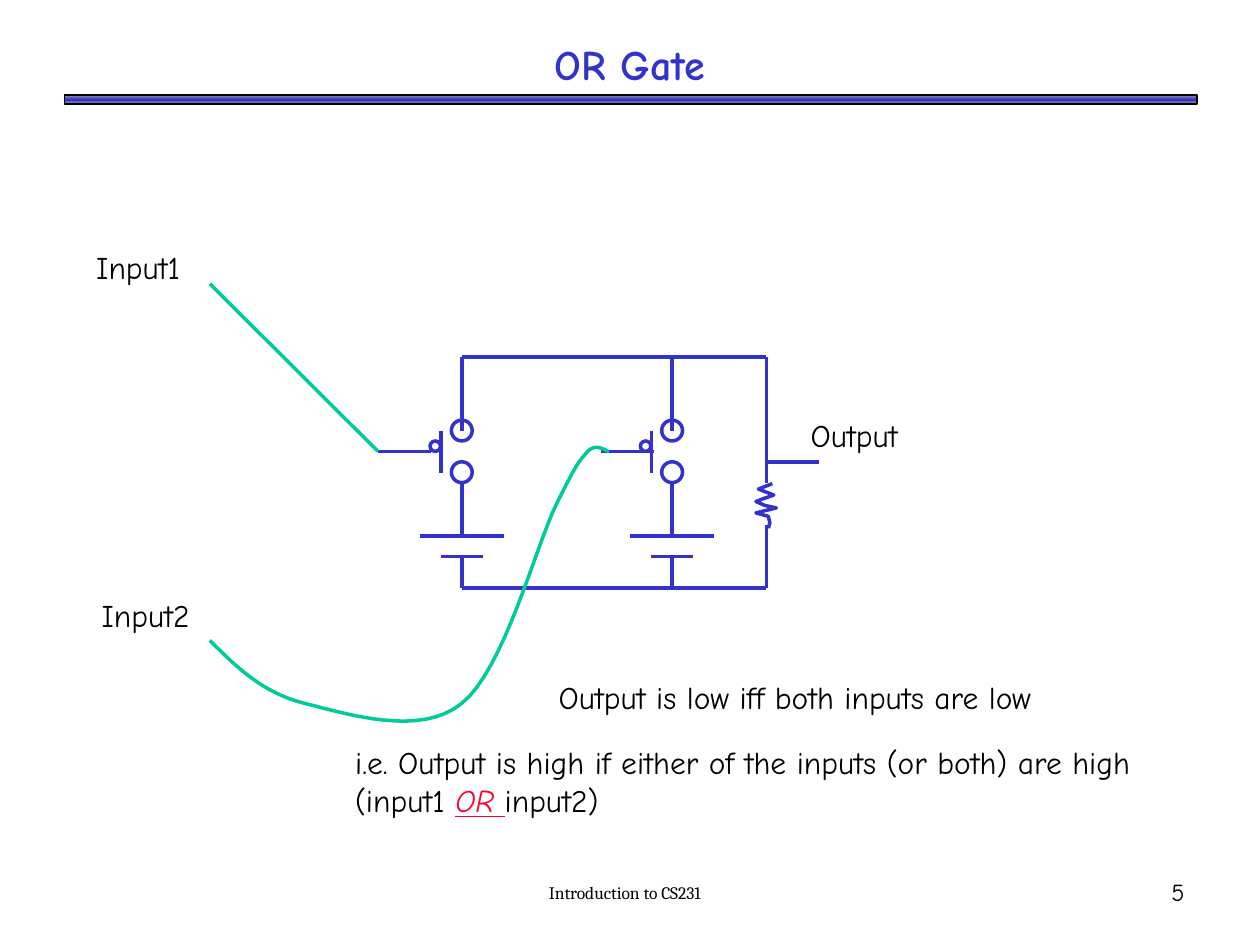
from copy import deepcopy

from lxml import etree
from pptx import Presentation
from pptx import util as u
from pptx.dml.color import RGBColor
from pptx.enum import shapes, text
from pptx.oxml.ns import qn

BLUE, GREEN, RED, BLACK, GREY = "3333CC", "00CC99", "FF0033", "000000", "969696"
FONT = "Comic Neue"
TOP, BOTTOM, RIGHT = 7.2, 11.85, 15.45  # rails of the circuit, cm
LEAD_Y = 9.1

RESISTOR = [(15.57, 9.75), (15.29, 9.86), (15.6, 9.98), (15.37, 10.06),
            (15.24, 10.11), (15.42, 10.19), (15.65, 10.24), (15.24, 10.34),
            (15.49, 10.41), (15.52, 10.54), (15.49, 10.65)]
INPUT2_START = (4.23, 12.91)
INPUT2_CURVES = [  # two control points and an end point each
    ((4.76, 13.44), (5.29, 13.97), (6.14, 14.18)),
    ((6.99, 14.39), (8.47, 14.87), (9.31, 14.18)),
    ((10.16, 13.51), (10.8, 11.01), (11.22, 10.16)),
    ((11.64, 9.31), (11.69, 9.28), (11.85, 9.1)),
    ((12.03, 8.92), (12.21, 9.1), (12.28, 9.1)),
]


def color(value):
    return RGBColor.from_string(value)


def style_outline(shape, stroke):
    shape.shadow.inherit = False
    shape.fill.background()
    shape.line.color.rgb = color(stroke)
    shape.line.width = u.Pt(2)


def add_wire(page, x1, y1, x2, y2, stroke=BLUE):
    wire = page.shapes.add_connector(
        shapes.MSO_CONNECTOR.STRAIGHT, u.Cm(x1), u.Cm(y1), u.Cm(x2), u.Cm(y2))
    wire.line.color.rgb = color(stroke)
    wire.line.width = u.Pt(2)
    etree.SubElement(wire._element.spPr, qn("a:effectLst"))


def add_circle(page, x, y, size):
    circle = page.shapes.add_shape(
        shapes.MSO_SHAPE.OVAL, u.Cm(x), u.Cm(y), u.Cm(size), u.Cm(size))
    style_outline(circle, BLUE)


def add_path(page, points, stroke):
    places = [(u.Cm(x), u.Cm(y)) for x, y in points]
    builder = page.shapes.build_freeform(*places[0])
    builder.add_line_segments(places[1:], close=False)
    style_outline(builder.convert_to_shape(), stroke)


def curve_points(start, curves, steps=16):
    """Sample a chain of cubic Bézier curves."""
    points = [start]
    for first, second, end in curves:
        for step in range(1, steps + 1):
            t = step / steps
            weights = ((1 - t) ** 3, 3 * t * (1 - t) ** 2, 3 * t * t * (1 - t), t ** 3)
            corners = (start, first, second, end)
            points.append(tuple(sum(w * c[axis] for w, c in zip(weights, corners))
                                for axis in (0, 1)))
        start = end
    return points


def add_text(page, place, *words, size=18, font=FONT, fill=BLACK, bold=False,
             align=text.PP_ALIGN.LEFT, anchor=text.MSO_ANCHOR.TOP):
    """Add a one-paragraph text box and return its spans."""
    box = page.shapes.add_textbox(*(u.Cm(length) for length in place))
    box.text_frame.word_wrap = True
    box.text_frame.vertical_anchor = anchor
    para = box.text_frame.paragraphs[0]
    para.alignment = align
    spans = []
    for word in words:
        span = para.add_run()
        span.text = word
        span.font.name = font
        span.font.size = u.Pt(size)
        span.font.bold = bold
        span.font.color.rgb = color(fill)
        spans.append(span)
    return spans


def add_title_bar(page):
    bar = page.shapes.add_shape(
        shapes.MSO_SHAPE.RECTANGLE, u.Cm(1.3), u.Cm(1.92), u.Cm(22.83), u.Cm(0.18))
    bar.shadow.inherit = False
    bar.line.color.rgb = color(BLACK)
    bar.line.width = u.Pt(1)
    bar.fill.gradient()
    bar.fill.gradient_angle = 90
    first = bar._element.spPr.find(".//" + qn("a:gs"))
    first.addnext(deepcopy(first))
    for stop, (position, value) in zip(
            bar.fill.gradient_stops, ((0, GREY), (0.5, BLUE), (1, GREY))):
        stop.position = position
        stop.color.rgb = color(value)


def add_switch(page, x):
    """Draw a switch and its battery between the rails, centred on x."""
    add_wire(page, x, TOP, x, 8.68)
    for y in (8.47, 9.31):
        add_circle(page, x - 0.21, y, 0.42)
    add_wire(page, x, 9.74, x, 10.8)
    for y, half in ((10.8, 0.85), (11.22, 0.42)):
        add_wire(page, x - half, y, x + half, y)
    add_wire(page, x, 11.22, x, BOTTOM)
    add_wire(page, x - 0.42, 8.68, x - 0.42, 9.53)
    add_circle(page, x - 0.64, 8.89, 0.21)


def add_circuit(page):
    left_switch, right_switch = 9.31, 13.55
    for y in (TOP, BOTTOM):
        add_wire(page, left_switch, y, RIGHT, y)
    for x in (left_switch, right_switch):
        add_switch(page, x)
    for lead_end in (8.68, 13.18):
        add_wire(page, lead_end, LEAD_Y, lead_end - 1.06, LEAD_Y)
    add_wire(page, RIGHT, TOP, RIGHT, 9.74)
    add_path(page, RESISTOR, BLUE)
    add_wire(page, RIGHT, 10.58, RIGHT, BOTTOM)
    add_wire(page, RIGHT, 9.31, 16.51, 9.31)
    add_wire(page, 4.23, 5.72, 7.62, LEAD_Y, GREEN)
    add_path(page, curve_points(INPUT2_START, INPUT2_CURVES), GREEN)


def add_labels(page):
    for label, x, y in (("Input1", 1.69, 4.87), ("Input2", 1.8, 11.89),
                        ("Output", 16.09, 8.26)):
        add_text(page, (x, y, 2.96, 1.02), label)
    add_text(page, (11.01, 13.55, 13.34, 1.02), "Output is low iff both inputs are low")
    spans = add_text(
        page, (6.91, 14.86, 17.36, 1.78),
        "i.e. Output is high if either of the inputs (or both) are high (input1 ",
        "OR ", "input2)")
    operator = spans[1].font
    operator.italic = operator.underline = True
    operator.color.rgb = color(RED)


def main():
    deck = Presentation()
    deck.slide_width, deck.slide_height = u.Cm(25.4), u.Cm(19.05)
    page = deck.slides.add_slide(deck.slide_layouts[6])
    middle = text.MSO_ANCHOR.MIDDLE
    add_title_bar(page)
    add_text(page, (7.62, 17.35, 9.95, 1.27), "Introduction to CS231", size=10,
             font="Cambria", align=text.PP_ALIGN.CENTER, anchor=middle)
    add_text(page, (18.85, 17.35, 5.28, 1.27), "5", size=14,
             align=text.PP_ALIGN.RIGHT, anchor=middle)
    add_text(page, (1.27, 0.64, 22.86, 1.27), "OR Gate", size=24, fill=BLUE,
             bold=True, align=text.PP_ALIGN.CENTER, anchor=middle)
    add_circuit(page)
    add_labels(page)
    deck.save("out.pptx")


if __name__ == "__main__":
    main()
